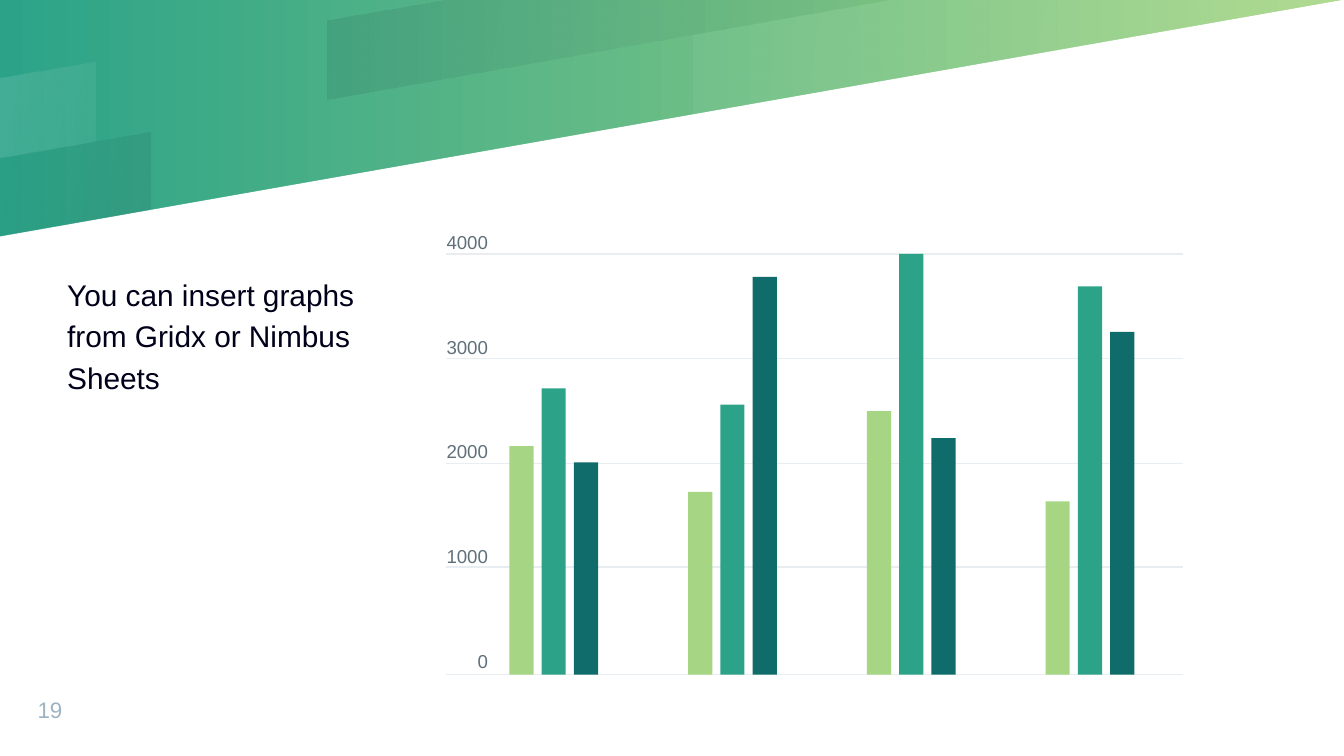
from lxml.etree import SubElement
from pptx import Presentation
from pptx.dml.color import RGBColor
from pptx.enum.shapes import MSO_CONNECTOR as Connector, MSO_SHAPE as Shape
from pptx.enum.text import MSO_ANCHOR as Anchor, MSO_AUTO_SIZE as AutoSize, PP_ALIGN as Align
from pptx.oxml.ns import qn
from pptx.util import Inches, Pt


def color(hex_value):
    return RGBColor.from_string(hex_value)


def write(frame, lines, size, hex_value, frame_format, paragraph_format):
    margins = dict.fromkeys(["margin_left", "margin_top", "margin_right", "margin_bottom"], 0)
    for name, value in {**margins, "word_wrap": True, **frame_format}.items():
        setattr(frame, name, value)
    frame.text = "\n".join(lines)
    for paragraph in frame.paragraphs:
        for name, value in paragraph_format.items():
            setattr(paragraph, name, value)
        for run in paragraph.runs:
            for name, value in {"name": "Arial", "size": Pt(size)}.items():
                setattr(run.font, name, value)
            run.font.color.rgb = color(hex_value)


deck = Presentation()
deck.slide_width = Inches(10)
deck.slide_height = deck.slide_width * 9 // 16
slide = deck.slides.add_slide(deck.slide_layouts[1])
shapes = slide.shapes
title, message = slide.placeholders
title.element.getparent().remove(title.element)

backdrop = slide.background.fill
backdrop.gradient()
backdrop.gradient_angle = 0
for stop, tone in zip(backdrop.gradient_stops, ["2CA388", "A6D683"]):
    stop.color.rgb = color(tone)

bands = [
    ([(0, 5.63), (10, 5.63), (10, 0), (9.99, 0), (0, 1.76)], "FFFFFF", None),
    ([(0, 1.17), (0, 1.76), (1.12, 1.56), (1.12, 0.98)], "00001A", (2, 8)),
    ([(6.65, 0), (5.16, 0.26), (5.16, 0.85), (9.99, 0)], "FFFFFF", (5, 12)),
    ([(0, 0.58), (0, 1.17), (0.71, 1.05), (0.71, 0.46)], "FFFFFF", (12, 5)),
    ([(3.32, 0), (2.44, 0.15), (2.44, 0.74), (6.65, 0)], "00001A", (8, 2)),
]
for corners, tone, opacities in bands:
    first, *rest = [(Inches(x), Inches(y)) for x, y in corners]
    outline = shapes.build_freeform(*first)
    outline.add_line_segments(rest, close=True)
    band = outline.convert_to_shape()
    band.shadow.inherit = False
    band.line.fill.background()
    if opacities is None:
        band.fill.solid()
        band.fill.fore_color.rgb = color(tone)
        continue
    band.fill.gradient()
    band.fill.gradient_angle = 350
    for stop in band.fill.gradient_stops:
        stop.color.rgb = color(tone)
    for tint, opacity in zip(band.element.spPr.iter(qn("a:srgbClr")), opacities):
        SubElement(tint, qn("a:alpha"), val=str(opacity * 1000))

message_place = {"left": Inches(0.5), "top": Inches(2.02), "width": Inches(2.4), "height": Inches(2.96)}
for name, value in message_place.items():
    setattr(message, name, value)
write(message.text_frame, ["You can insert graphs from Gridx or Nimbus Sheets"], 16, "00001A",
      {"auto_size": AutoSize.NONE, "vertical_anchor": Anchor.TOP},
      {"alignment": Align.LEFT, "line_spacing": 1.15, "space_before": Pt(3.6)})
message_props = message.text_frame.paragraphs[0]._p.get_or_add_pPr()
for name in ["marL", "indent"]:
    message_props.set(name, "0")
SubElement(message_props, qn("a:buNone"))
shapes.element.append(message.element)

page_number = shapes.add_textbox(Inches(0.28), Inches(5.11), Inches(0.53), Inches(0.27))
write(page_number.text_frame, ["19"], 12, "9EB3C2", {"vertical_anchor": Anchor.BOTTOM}, {})

for y in [1.89, 2.67, 3.45, 4.22, 5.02]:
    gridline = shapes.add_connector(Connector.STRAIGHT, Inches(3.32), Inches(y), Inches(8.8), Inches(y))
    gridline.line.color.rgb = color("E8EDF1")
    gridline.line.width = Pt(0.75)
    SubElement(gridline.element.spPr, qn("a:effectLst"))

scale = shapes.add_textbox(Inches(3.24), Inches(1.72), Inches(0.39), Inches(3.31))
write(scale.text_frame, ["4000", "3000", "2000", "1000", "0"], 10, "60707A", {},
      {"alignment": Align.RIGHT})
for paragraph in scale.text_frame.paragraphs[1:]:
    paragraph.space_before = Pt(44)
scale.text_frame.paragraphs[-1].space_after = Pt(44)

bar_tones = ["A6D683", "2CA388", "106B6B"]
bar_groups = [(1.7, 2.13, 1.58), (1.36, 2.01, 2.96), (1.96, 3.13, 1.76), (1.29, 2.89, 2.55)]
first_bar_left, group_step, bar_step, bar_width, baseline = 3.79, 1.33, 0.24, 0.18, 5.02
for group, heights in enumerate(bar_groups):
    for position, (height, tone) in enumerate(zip(heights, bar_tones)):
        left = first_bar_left + group * group_step + position * bar_step
        bar = shapes.add_shape(Shape.RECTANGLE, Inches(left), Inches(baseline - height),
                               Inches(bar_width), Inches(height))
        bar.shadow.inherit = False
        bar.fill.solid()
        bar.fill.fore_color.rgb = color(tone)
        bar.line.fill.background()

deck.save("out.pptx")
